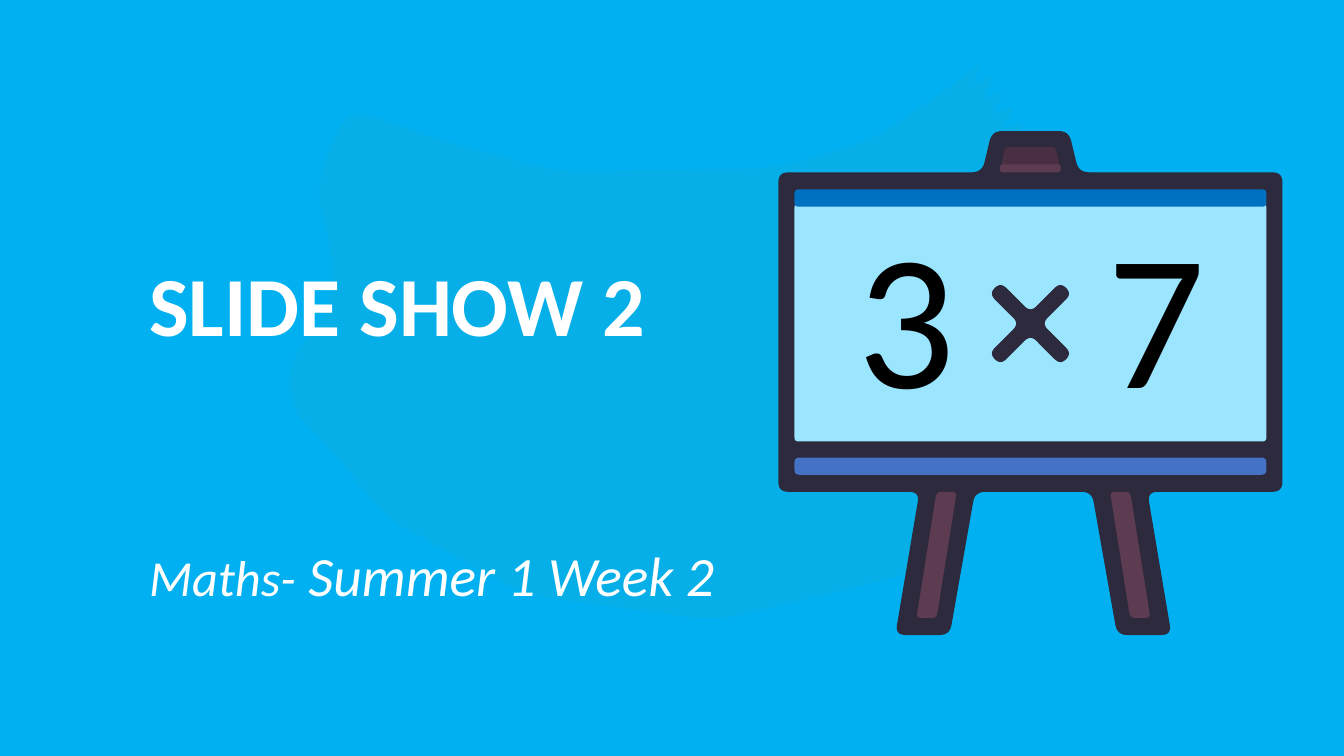
from math import cos, hypot, radians, sin

from lxml.etree import SubElement
from pptx import Presentation
from pptx.dml.color import RGBColor
from pptx.oxml.ns import qn
from pptx.util import Inches, Pt

COLORS = {
    "sky": "00B0F0", "bird": "25AECE", "white": "FFFFFF", "black": "000000",
    "frame": "2D2A3D", "screen": "9BE5FF", "band": "0070C0", "tray": "4472C4",
    "wood": "5D3C52", "clip": "4A2F42",
}

TEXTS = [
    ((1.38, 5.5, 5.92, 0.62), [("Maths-", 36), (" Summer 1 Week 2", 39.6)],
     "white", {"italic": True}, 0.7),
    ((1.38, 2.46, 6.33, 1.11), [("SLIDE SHOW 2", 60)], "white", {"bold": True}, 1),
    ((8.41, 1.89, 0.57, 2.42), [("3", 138)], "black", {}, 1),
    ((10.89, 1.89, 0.57, 2.42), [("7", 138)], "black", {}, 1),
]

BIRD_BACK = [(3.55, 1.1), (4.4, 1.4), (5.5, 1.7), (7.69, 1.67), (8.63, 1.4), (9.3, 0.95)]
BIRD_BELLY = [(10.2, 4.2), (9.2, 5.65), (7.1, 6.16), (5.2, 5.9), (3.8, 5.12), (3.46, 4.66)]
BIRD_HEAD = [(2.84, 4), (2.9, 3.5), (3.28, 3.1), (3.3, 2.5), (3.12, 1.9), (3.35, 1.25)]
FIRST_TIP, LAST_TIP, TIP_COUNT = (9.8, 0.57), (10.2, 1.17), 5
NOTCH_SHIFT = (-0.2, 0.3)

BOARD_CENTER, LEGS_CENTER = 10.22, 10.25
BOARD_HALF, BOARD_TOP, BOARD_BOTTOM = 2.5, 1.71, 4.88
PANEL_HALF = 2.34
LEG_FOOT, WOOD_FOOT = 6.3, 6.13
CROSS_HEIGHT, CROSS_REACH, CROSS_HALF_WIDTH = 3.21, 0.5, 0.08


def mirrored(center, half):
    left = [(center - offset, y) for offset, y in reversed(half)]
    return left + [(center + offset, y) for offset, y in half]


def panel(half, top, bottom):
    top_edge = mirrored(BOARD_CENTER, [(half, top)])
    return top_edge + mirrored(BOARD_CENTER, [(half, bottom)])[::-1]


def bird_outline():
    tail = []
    for index in range(TIP_COUNT):
        share = index / (TIP_COUNT - 1)
        x, y = (a + (b - a) * share for a, b in zip(FIRST_TIP, LAST_TIP))
        tail += [(x, y), (x + NOTCH_SHIFT[0], y + NOTCH_SHIFT[1])]
    return BIRD_BACK + tail + BIRD_BELLY + BIRD_HEAD


def frame_outline():
    top = mirrored(BOARD_CENTER, [(0.38, 1.3), (0.48, BOARD_TOP), (BOARD_HALF, BOARD_TOP)])
    legs = mirrored(LEGS_CENTER, [(0.58, BOARD_BOTTOM), (0.83, LEG_FOOT),
                                  (1.37, LEG_FOOT), (1.13, BOARD_BOTTOM)])
    left, right = mirrored(BOARD_CENTER, [(BOARD_HALF, BOARD_BOTTOM)])
    return top + [right] + legs[::-1] + [left]


def leg_wood(side):
    corners = [(0.76, BOARD_BOTTOM), (0.96, BOARD_BOTTOM), (1.16, WOOD_FOOT), (0.96, WOOD_FOOT)]
    return [(LEGS_CENTER + side * offset, y) for offset, y in corners]


def cross_outline():
    points = []
    for angle in (45, 135, 225, 315):
        c, s = cos(radians(angle)), sin(radians(angle))
        for x, y in ((CROSS_REACH, -CROSS_HALF_WIDTH), (CROSS_REACH, CROSS_HALF_WIDTH),
                     (CROSS_HALF_WIDTH, CROSS_HALF_WIDTH)):
            points.append((BOARD_CENTER + x * c - y * s, CROSS_HEIGHT + x * s + y * c))
    return points


def toward(corner, target, radius):
    dx, dy = target[0] - corner[0], target[1] - corner[1]
    share = min(radius / hypot(dx, dy), 0.5)
    return corner[0] + dx * share, corner[1] + dy * share


def rounded(points, radius, steps=6):
    outline = []
    for index, corner in enumerate(points):
        start = toward(corner, points[index - 1], radius)
        end = toward(corner, points[(index + 1) % len(points)], radius)
        for step in range(steps + 1):
            t = step / steps
            outline.append(tuple((1 - t) ** 2 * a + 2 * t * (1 - t) * b + t * t * c
                                 for a, b, c in zip(start, corner, end)))
    return outline


def add_outline(page, points, color, radius):
    units = [(round(x * 1000), round(y * 1000)) for x, y in rounded(points, radius)]
    builder = page.shapes.build_freeform(*units[0], scale=Inches(1) / 1000)
    builder.add_line_segments(units[1:], close=True)
    shape = builder.convert_to_shape()
    shape.shadow.inherit = False
    shape.fill.solid()
    shape.fill.fore_color.rgb = RGBColor.from_string(COLORS[color])
    shape.line.fill.background()
    return shape


def add_bird(page):
    bird = add_outline(page, bird_outline(), "bird", 0.3)
    fill_color = bird.element.find(".//" + qn("a:srgbClr"))
    SubElement(fill_color, qn("a:alpha"), val="20000")


def add_easel(page):
    clip = mirrored(BOARD_CENTER, [(0.25, 1.46)]) + mirrored(BOARD_CENTER, [(0.29, 1.65)])[::-1]
    parts = [
        (frame_outline(), "frame", 0.1),
        (panel(PANEL_HALF, 2.02, 4.38), "screen", 0.04),
        (panel(PANEL_HALF, 1.88, 2.05), "band", 0.04),
        (panel(PANEL_HALF, 4.54, 4.71), "tray", 0.05),
        (leg_wood(-1), "wood", 0.05),
        (leg_wood(1), "wood", 0.05),
        (clip, "clip", 0.04),
        (panel(0.3, 1.63, 1.71), "wood", 0.03),
        (cross_outline(), "frame", 0.08),
    ]
    for points, color, radius in parts:
        add_outline(page, points, color, radius)


def add_text(page, place, spans, color, style, spacing):
    box = page.shapes.add_textbox(*map(Inches, place))
    box.text_frame.word_wrap = True
    para = box.text_frame.paragraphs[0]
    para.line_spacing = spacing
    para.font.name = "Calibri"
    para.font.color.rgb = RGBColor.from_string(COLORS[color])
    for name, value in style.items():
        setattr(para.font, name, value)
    for text, size in spans:
        span = para.add_run()
        span.text = text
        span.font.size = Pt(size)


def main():
    deck = Presentation()
    deck.slide_width, deck.slide_height = Inches(13.33), Inches(7.5)
    page = deck.slides.add_slide(deck.slide_layouts[6])
    page.background.fill.solid()
    page.background.fill.fore_color.rgb = RGBColor.from_string(COLORS["sky"])
    add_bird(page)
    add_easel(page)
    for text in TEXTS:
        add_text(page, *text)
    deck.save("out.pptx")


if __name__ == "__main__":
    main()
